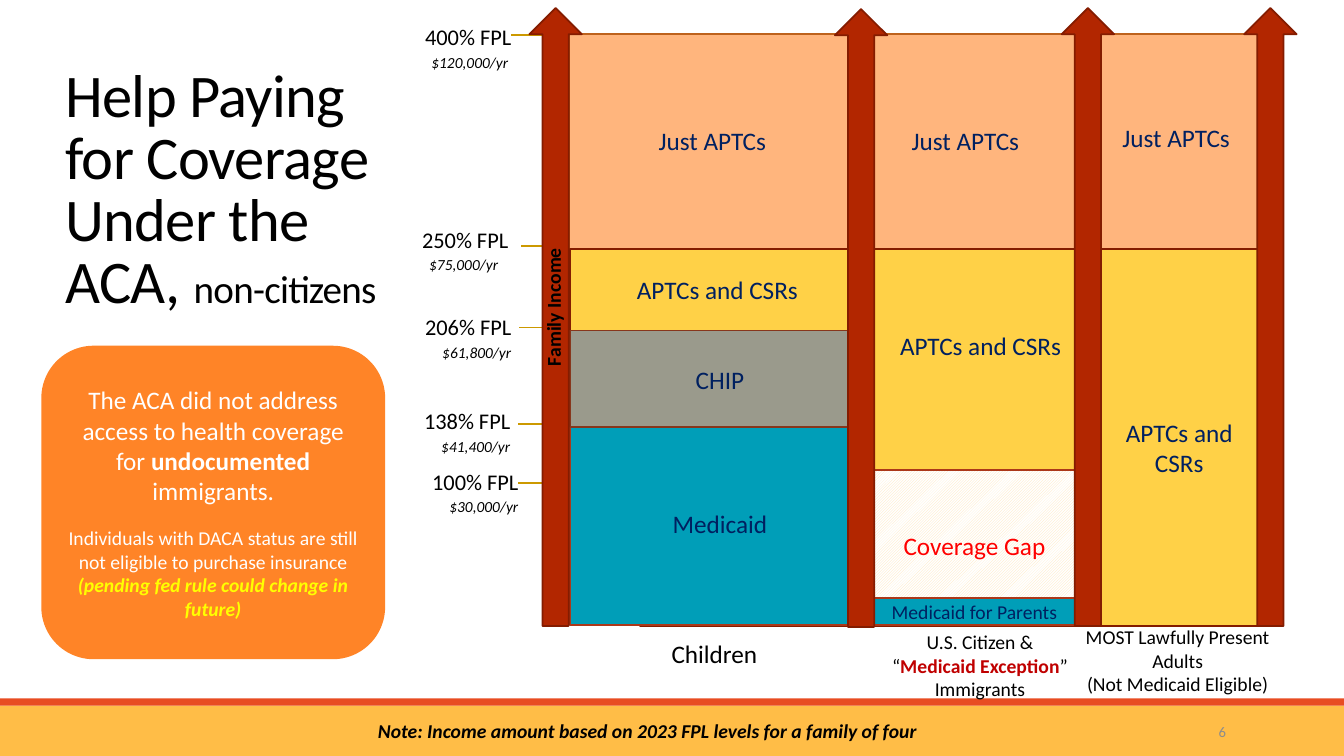
from lxml.etree import SubElement
from pptx import Presentation
from pptx.dml.color import RGBColor as Rgb
from pptx.enum.dml import MSO_PATTERN as Pattern
from pptx.enum.shapes import MSO_CONNECTOR as Connector, MSO_SHAPE as Shape
from pptx.enum.text import MSO_ANCHOR as Anchor, MSO_AUTO_SIZE as AutoSize, PP_ALIGN as Align
from pptx.oxml.ns import qn
from pptx.util import Pt

PX = 9144


class Theme:
    """Colours, type sizes and line width of the slide."""
    font = "Calibri"
    black, white, navy, grey = "000000", "FFFFFF", "002060", "8C8C8C"
    red, crimson, highlight = "FF0000", "C00000", "FFFF00"
    peach, yellow, stone, teal = "FFB57D", "FFD147", "9A9A8C", "009EB8"
    gap_stripe, callout, footer, footer_edge = "FFE5B5", "FF8427", "FFBD47", "E84C22"
    arrow, arrow_edge, tick = "B22600", "841C00", "CC9900"
    peach_edge, segment_edge, stone_edge = "BD621D", "AC3819", "87361C"
    title, subtitle, program, level, note, income, number = 43.2, 27.9, 18, 16, 14, 11, 10.5
    line = 1.25


def px(*lengths):
    """Turn px lengths into EMU."""
    return [length * PX for length in lengths]


def apply(target, formats):
    """Set attributes of a target from a dict of format values."""
    for key, value in formats.items():
        setattr(target, key, value)


def write(frame, paragraphs, size, color=Theme.black, anchor=Anchor.TOP, **paragraph_formats):
    """Fill a frame with paragraphs, each a list of (text, format overrides) runs."""
    apply(frame, {"word_wrap": True, "auto_size": AutoSize.NONE, "vertical_anchor": anchor})
    for index, runs in enumerate(paragraphs):
        paragraph = frame.paragraphs[0] if index == 0 else frame.add_paragraph()
        apply(paragraph, paragraph_formats)
        for text, overrides in runs:
            formats = {"name": Theme.font, "size": size, "color": color, **overrides}
            run = paragraph.add_run()
            run.text = text
            run.font.color.rgb = Rgb.from_string(formats.pop("color"))
            formats["size"] = Pt(formats["size"])
            apply(run.font, formats)
    return frame


def add_label(slide, box, paragraphs, size, color=Theme.black, alignment=Align.CENTER, **formats):
    """Add a text box and return it."""
    label = slide.shapes.add_textbox(*px(*box))
    write(label.text_frame, paragraphs, size, color, alignment=alignment, **formats)
    return label


def add_block(slide, kind, box, fill, edge=None):
    """Add a filled preset shape with an optional outline."""
    block = slide.shapes.add_shape(kind, *px(*box))
    block.shadow.inherit = False
    block.fill.solid()
    block.fill.fore_color.rgb = Rgb.from_string(fill)
    if edge:
        block.line.color.rgb = Rgb.from_string(edge)
        block.line.width = Pt(Theme.line)
    else:
        block.line.fill.background()
    return block


def add_segment(slide, box, fill, edge, text, size=Theme.program, color=Theme.navy):
    """Add a program segment with its centred name."""
    segment = add_block(slide, Shape.RECTANGLE, box, fill, edge)
    write(segment.text_frame, [[(text, {})]], size, color, Anchor.MIDDLE, alignment=Align.CENTER)
    return segment


def add_tick(slide, left, top):
    """Add the line from an income level to the income axis."""
    tick = slide.shapes.add_connector(Connector.STRAIGHT, *px(left, top, left + 59, top))
    tick.line.color.rgb = Rgb.from_string(Theme.tick)
    tick.line.width = Pt(Theme.line)
    SubElement(tick._element.spPr, qn("a:effectLst"))


def add_level(slide, right, top, percent, income, indent, tick):
    """Add an income level, its yearly amount and its tick."""
    add_tick(slide, *tick)
    label = add_label(slide, (right - 150, top, 150, 52),
                      [[(f"{percent}% FPL", {})],
                       [(f"${income}/yr", {"size": Theme.income, "italic": True})]],
                      Theme.level, alignment=Align.RIGHT, line_spacing=Pt(15))
    label.text_frame.paragraphs[1]._p.get_or_add_pPr().set("marR", str(indent * PX))


def add_title(slide):
    """Place and fill the title placeholder."""
    title = slide.shapes.title
    left, top, width, height = px(55, 68, 350, 250)
    apply(title, {"left": left, "top": top, "width": width, "height": height})
    frame = write(title.text_frame,
                  [[("Help Paying for Coverage Under the ACA, ", {}),
                    ("non-citizens", {"size": Theme.subtitle})]],
                  Theme.title, anchor=Anchor.BOTTOM, alignment=Align.LEFT, line_spacing=0.85)
    for run in frame.paragraphs[0].runs:
        run._r.get_or_add_rPr().set("spc", "-50")


def add_footer(slide):
    """Add the footer band with its note and slide number."""
    add_block(slide, Shape.RECTANGLE, (0, 700, 1333, 50), Theme.footer)
    add_block(slide, Shape.RECTANGLE, (0, 693, 1333, 7), Theme.footer_edge)
    add_label(slide, (1083, 706, 143, 40), [[("6", {})]], Theme.number, Theme.grey,
              Align.RIGHT).text_frame.vertical_anchor = Anchor.MIDDLE
    add_label(slide, (365, 708, 644, 34),
              [[("Note: Income amount based on 2023 FPL levels for a family of four",
                 {"bold": True, "italic": True})]], Theme.note, alignment=Align.LEFT)


def add_callout(slide):
    """Add the rounded note on undocumented immigrants."""
    callout = add_block(slide, Shape.ROUNDED_RECTANGLE, (41, 343, 341, 311), Theme.callout)
    small = {"size": Theme.note}
    frame = write(callout.text_frame, [
        [("The ACA did not address access to health coverage for ", {}),
         ("undocumented", {"bold": True}), (" immigrants.", {})],
        [("Individuals with DACA status are still not eligible to purchase insurance ", small),
         ("(pending fed rule could change in future)",
          {**small, "color": Theme.highlight, "bold": True, "italic": True})],
    ], Theme.program, Theme.white, Anchor.MIDDLE, alignment=Align.CENTER)
    frame.paragraphs[1].space_before = Pt(14.5)


def add_programs(slide):
    """Add the coverage segments, the income arrows and the program names."""
    add_block(slide, Shape.RECTANGLE, (565, 34, 687, 214), Theme.peach, Theme.peach_edge)
    subsidies = add_block(slide, Shape.CORNER, (565, 247, 687, 374),
                          Theme.yellow, Theme.arrow_edge)
    subsidies.rotation = 180
    subsidies.adjustments[0], subsidies.adjustments[1] = 0.36, 1.65
    add_segment(slide, (565, 418, 298, 202), Theme.teal, Theme.segment_edge, "Medicaid")
    gap = add_segment(slide, (863, 466, 207, 151), Theme.white, Theme.segment_edge,
                      "Coverage Gap", color=Theme.red)
    gap.fill.patterned()
    gap.fill.pattern = Pattern.LIGHT_UPWARD_DIAGONAL
    gap.fill.fore_color.rgb = Rgb.from_string(Theme.gap_stripe)
    gap.fill.back_color.rgb = Rgb.from_string(Theme.white)
    add_segment(slide, (565, 328, 298, 96), Theme.stone, Theme.stone_edge, "CHIP")
    add_segment(slide, (863, 593, 207, 27), Theme.teal, Theme.segment_edge,
                "Medicaid for Parents", Theme.note)
    for left, top in ((525, 8), (828, 9), (1053, 8), (1234, 8)):
        add_block(slide, Shape.UP_ARROW, (left, top, 52, 613), Theme.arrow, Theme.arrow_edge)
    add_label(slide, (475, 278, 152, 38), [[("Family Income", {"bold": True})]],
              Theme.note, alignment=Align.LEFT).rotation = 270
    for text, box in (("Just APTCs", (582, 119, 249, 40)),
                      ("Just APTCs", (833, 119, 249, 40)),
                      ("Just APTCs", (1042, 116, 249, 40)),
                      ("APTCs and CSRs", (587, 267, 249, 40)),
                      ("APTCs and CSRs", (848, 323, 249, 40)),
                      ("APTCs and CSRs", (1085, 409, 169, 71))):
        add_label(slide, box, [[(text, {})]], Theme.program, Theme.navy)


def add_groups(slide):
    """Add the names of the groups below the columns."""
    add_label(slide, (554, 628, 309, 40), [[("Children", {})]], Theme.program)
    add_label(slide, (874, 620, 196, 81),
              [[("U.S. Citizen & “", {}),
                ("Medicaid Exception", {"color": Theme.crimson, "bold": True}),
                ("” Immigrants", {})]], Theme.note)
    add_label(slide, (1067, 615, 202, 81),
              [[("MOST Lawfully Present Adults", {})], [("(Not Medicaid Eligible)", {})]],
              Theme.note)


def main():
    """Build the slide and save it."""
    deck = Presentation()
    deck.slide_width, deck.slide_height = px(1333, 750)
    slide = deck.slides.add_slide(deck.slide_layouts[5])
    add_footer(slide)
    add_title(slide)
    for level in ((517, 24, 400, "120,000", 3, (507, 35)),
                  (514, 225, 250, "75,000", 10, (517, 244)),
                  (517, 312, 206, "61,800", 0, (515, 325)),
                  (516, 405, 138, "41,400", 0, (514, 421)),
                  (524, 465, 100, "30,000", 0, (514, 479))):
        add_level(slide, *level)
    add_programs(slide)
    add_groups(slide)
    add_callout(slide)
    deck.save("out.pptx")


if __name__ == "__main__":
    main()
